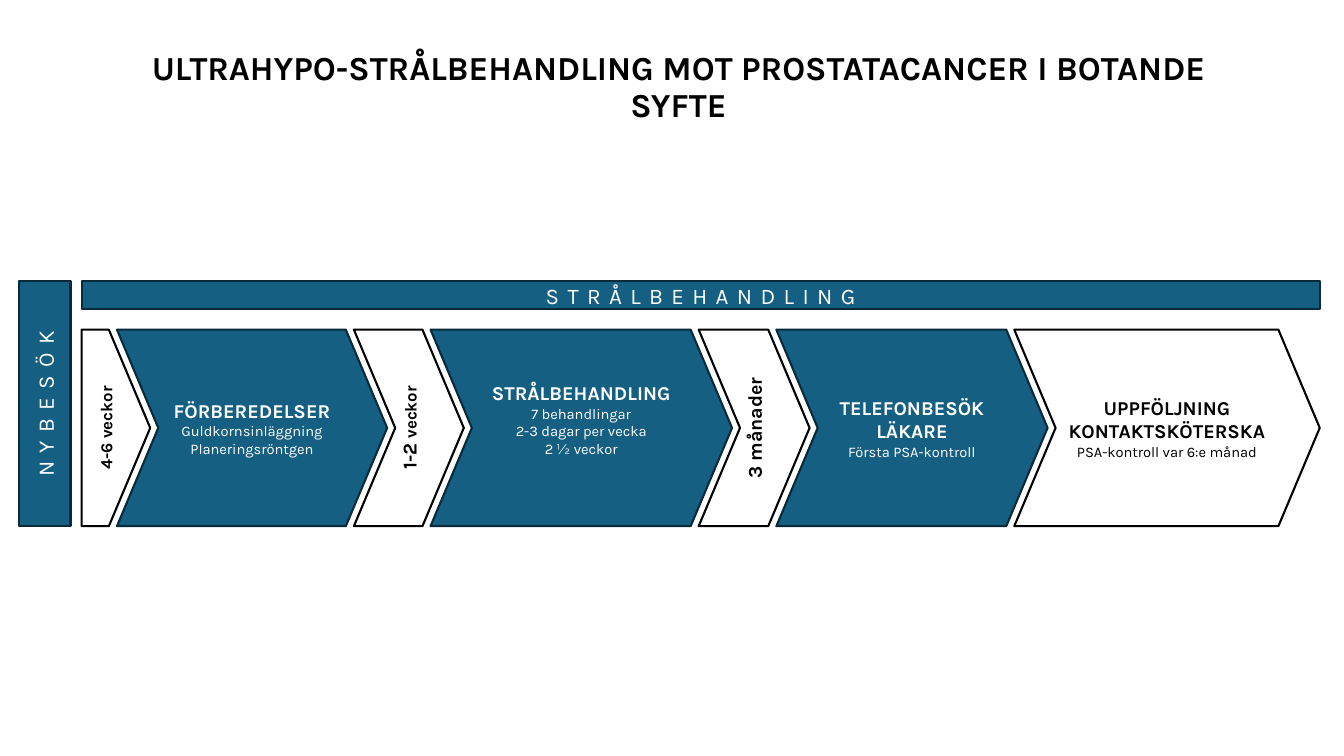
from dataclasses import dataclass

from pptx import Presentation
from pptx import util as u
from pptx.dml.color import RGBColor
from pptx.enum import shapes, text

TITLE = "ULTRAHYPO-STRÅLBEHANDLING MOT PROSTATACANCER I BOTANDE SYFTE"
VISIT = "NYBESÖK"
PHASE = "STRÅLBEHANDLING"

# Waiting times: width, runs of (words, size name)
# Stages: width, heading, details, filled
STEPS = [
    ("wait", 0.68, [("4-6 veckor", "small")]),
    ("stage", 2.68, "FÖRBEREDELSER", ["Guldkornsinläggning", "Planeringsröntgen"], True),
    ("wait", 1.09, [("1-2 ", "heading"), ("veckor", "small")]),
    ("stage", 2.99, "STRÅLBEHANDLING",
     ["7 behandlingar", "2-3 dagar per vecka", "2 ½ veckor"], True),
    ("wait", 1.1, [("3 månader", "heading")]),
    ("stage", 2.69, "TELEFONBESÖK LÄKARE", ["Första PSA-kontroll"], True),
    ("stage", 3.03, "UPPFÖLJNING KONTAKTSKÖTERSKA", ["PSA-kontroll var 6:e månad"], False),
]


@dataclass(frozen=True)
class Theme:
    font: str = "Karla"
    blue: str = "156082"
    edge: str = "092A39"
    white: str = "FFFFFF"
    black: str = "000000"
    title: float = 24
    band: float = 16
    heading: float = 14
    small: float = 12
    detail: float = 10.5
    line: float = 1.5
    tracking: int = 6


THEME = Theme()
WIDTH, HEIGHT = 13.33, 7.5
FLOW_LEFT, FLOW_RIGHT = 0.81, 13.09
BAND_TOP, BAND_HEIGHT = 2.79, 0.28
STEP_TOP, STEP_HEIGHT = 3.27, 1.95
VISIT_LEFT, VISIT_WIDTH = 0.19, 0.51
POINT, OVERLAP = 0.41, 0.33  # arrow tip depth, overlap of neighbouring steps
RAISE = 0.17  # lifts the three-line stage by half a text line

Kind = shapes.MSO_SHAPE


def write(box, paragraphs, color):
    """Fill a box with centred paragraphs of (runs, bold, tracking)."""
    frame = box.text_frame
    frame.word_wrap = True
    frame.vertical_anchor = text.MSO_ANCHOR.MIDDLE
    for index, (runs, bold, tracking) in enumerate(paragraphs):
        para = frame.add_paragraph() if index else frame.paragraphs[0]
        para.alignment = text.PP_ALIGN.CENTER
        para.font.name = THEME.font
        para.font.bold = bold
        para.font.color.rgb = RGBColor.from_string(color)
        para.font.size = u.Pt(getattr(THEME, runs[0][1]))
        for words, size in runs:
            span = para.add_run()
            span.text = words
            if size != runs[0][1]:
                span.font.size = u.Pt(getattr(THEME, size))
            if tracking:
                span.font._element.set("spc", str(tracking * 100))


def add_block(page, kind, left, top, width, height, filled):
    box = page.shapes.add_shape(kind, *map(u.Inches, (left, top, width, height)))
    box.shadow.inherit = False
    box.fill.solid()
    box.fill.fore_color.rgb = RGBColor.from_string(THEME.blue if filled else THEME.white)
    box.line.color.rgb = RGBColor.from_string(THEME.edge if filled else THEME.black)
    box.line.width = u.Pt(THEME.line)
    return box


def add_step(page, kind, left, width, filled):
    box = add_block(page, kind, left, STEP_TOP, width, STEP_HEIGHT, filled)
    box.adjustments[0] = POINT / min(width, STEP_HEIGHT)
    return box


def add_title(page):
    box = page.shapes.add_textbox(*map(u.Inches, (0.91, 0.52, 11.64, 0.71)))
    write(box, [([(TITLE, "title")], True, 0)], THEME.black)
    box.text_frame.paragraphs[0].line_spacing = 0.9


def add_bands(page):
    phase = add_block(page, Kind.RECTANGLE, FLOW_LEFT, BAND_TOP,
                      FLOW_RIGHT - FLOW_LEFT, BAND_HEIGHT, True)
    length = STEP_TOP + STEP_HEIGHT - BAND_TOP
    shift = (length - VISIT_WIDTH) / 2
    visit = add_block(page, Kind.RECTANGLE, VISIT_LEFT - shift, BAND_TOP + shift,
                      length, VISIT_WIDTH, True)
    visit.rotation = 270
    for box, words in ((phase, PHASE), (visit, VISIT)):
        write(box, [([(words, "band")], False, THEME.tracking)], THEME.white)


def add_flow(page):
    left = FLOW_LEFT
    for index, (role, width, *content) in enumerate(STEPS):
        kind = Kind.CHEVRON if index else Kind.PENTAGON
        if role == "wait":
            box = add_step(page, kind, left, width, False)
            box.text_frame._txBody.bodyPr.set("vert", "vert270")
            write(box, [(content[0], True, 0)], THEME.black)
        else:
            heading, details, filled = content
            box = add_step(page, kind, left, width, filled)
            paragraphs = [([(heading, "heading")], True, 0)]
            paragraphs += [([(line, "detail")], False, 0) for line in details]
            write(box, paragraphs, THEME.white if filled else THEME.black)
            if len(details) > 2:
                box.text_frame.margin_bottom = u.Inches(0.05 + RAISE)
        left += width - OVERLAP


def main():
    deck = Presentation()
    deck.slide_width, deck.slide_height = u.Inches(WIDTH), u.Inches(HEIGHT)
    page = deck.slides.add_slide(deck.slide_layouts[6])
    add_title(page)
    add_bands(page)
    add_flow(page)
    deck.save("out.pptx")


if __name__ == "__main__":
    main()
